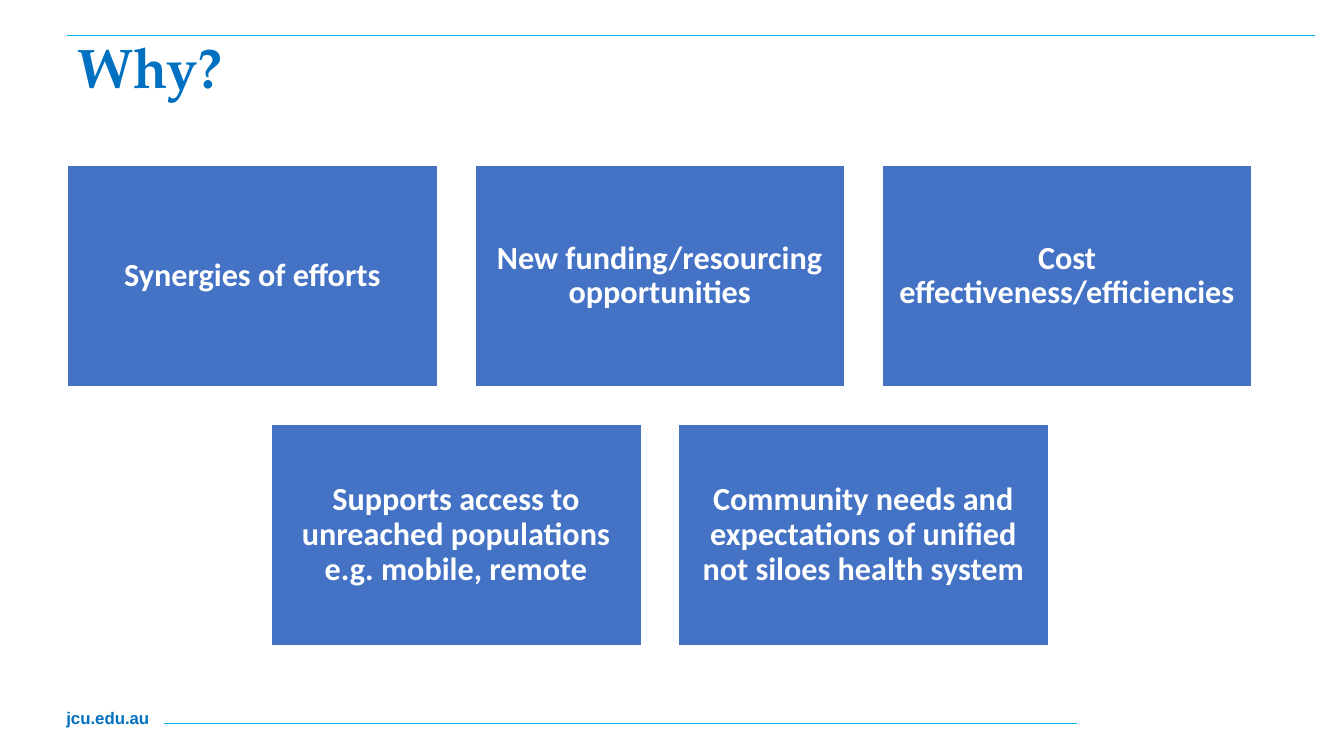
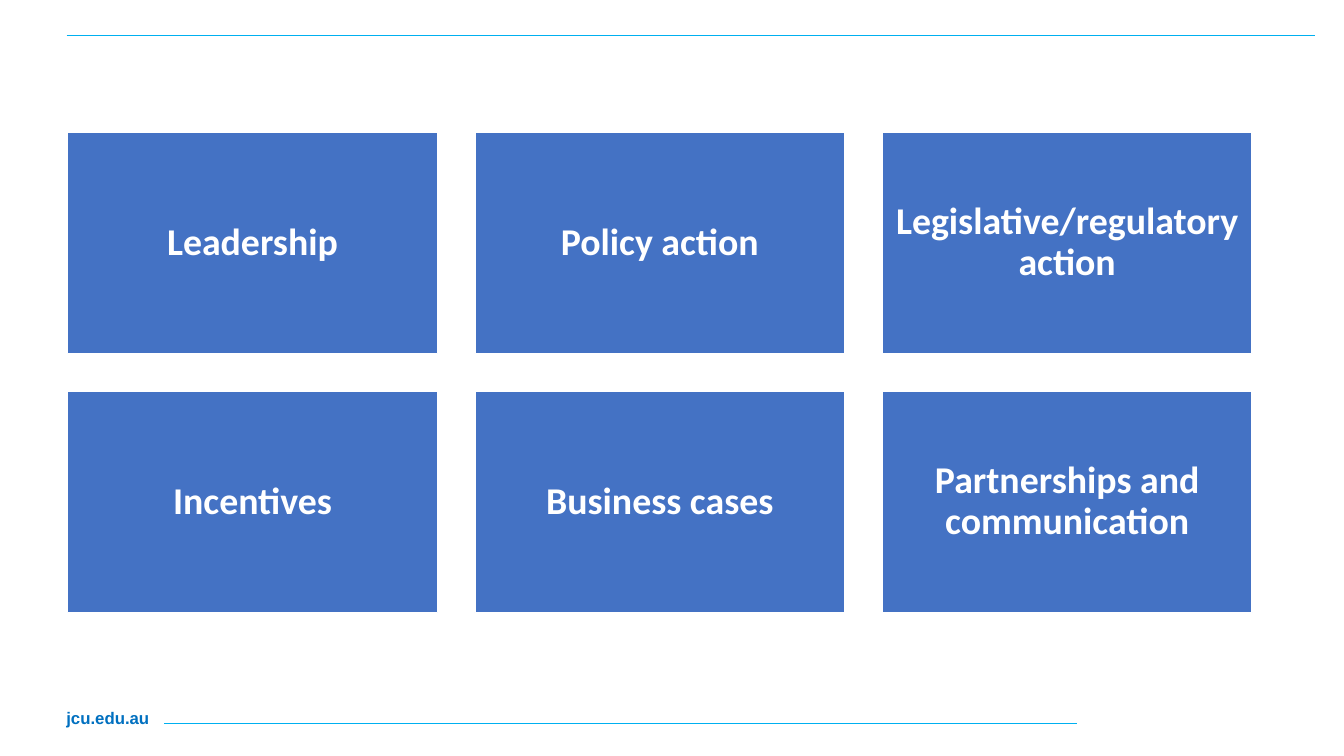
from dataclasses import dataclass

from lxml import etree
from pptx import Presentation
from pptx.dml.color import RGBColor
from pptx.enum.shapes import MSO_CONNECTOR, MSO_SHAPE
from pptx.enum.text import MSO_ANCHOR, MSO_AUTO_SIZE, PP_ALIGN
from pptx.oxml.ns import qn
from pptx.util import Inches, Pt

STRAIGHT = MSO_CONNECTOR.STRAIGHT
RECTANGLE = MSO_SHAPE.RECTANGLE
TOP, MIDDLE = MSO_ANCHOR.TOP, MSO_ANCHOR.MIDDLE
LEFT, CENTER = PP_ALIGN.LEFT, PP_ALIGN.CENTER
NO_AUTOFIT = MSO_AUTO_SIZE.NONE
TITLE_ONLY, BLANK = 5, 6


@dataclass(frozen=True)
class Theme:
    brand: RGBColor = RGBColor(0x00, 0x70, 0xC0)
    rule: RGBColor = RGBColor(0x00, 0xB0, 0xF0)
    tile: RGBColor = RGBColor(0x44, 0x72, 0xC4)
    white: RGBColor = RGBColor(0xFF, 0xFF, 0xFF)
    title_font: str = "TeX Gyre Pagella"
    tile_font: str = "Calibri"
    footer_font: str = "Arial"
    title_size: int = 40
    footer_size: int = 12


theme = Theme()


def write_text(shape, text, *, font, size, color, align=LEFT, anchor=TOP,
               inset=(0.1, 0.05), spacing=1.0):
    """Put one bold paragraph into a shape; inset is (sides, top and bottom)."""
    frame = shape.text_frame
    frame.word_wrap = True
    frame.auto_size = NO_AUTOFIT
    frame.vertical_anchor = anchor
    frame.margin_left = frame.margin_right = Inches(inset[0])
    frame.margin_top = frame.margin_bottom = Inches(inset[1])
    para = frame.paragraphs[0]
    para.alignment = align
    para.line_spacing = spacing
    span = para.add_run()
    span.text = text
    span.font.name = font
    span.font.size = Pt(size)
    span.font.bold = True
    span.font.color.rgb = color


deck = Presentation()
deck.slide_width, deck.slide_height = Inches(13.33), Inches(7.5)
why_page = deck.slides.add_slide(deck.slide_layouts[TITLE_ONLY])
action_page = deck.slides.add_slide(deck.slide_layouts[BLANK])

# Shared footer and rules: drawn once, then moved to the slide master
footer = why_page.shapes.add_textbox(Inches(0.56), Inches(6.97), Inches(1.23), Inches(0.3))
write_text(footer, "jcu.edu.au", font=theme.footer_font, size=theme.footer_size,
           color=theme.brand)
master_parts = [footer]
for start, end, y in [(1.63, 10.68, 7.18), (0.66, 13.04, 0.35)]:
    rule = why_page.shapes.add_connector(STRAIGHT, Inches(start), Inches(y),
                                         Inches(end), Inches(y))
    rule.line.color.rgb = theme.rule
    rule.line.width = Pt(0.5)
    etree.SubElement(rule.element.spPr, qn("a:effectLst"))
    master_parts.append(rule)
for part in master_parts:
    deck.slide_master.shapes.element.append(part.element)

# Title
title = why_page.shapes.title
title.left, title.top = Inches(0.67), Inches(0.35)
title.width, title.height = Inches(11.74), Inches(0.57)
write_text(title, "Why?", font=theme.title_font, size=theme.title_size,
           color=theme.brand, spacing=0.9)

# Tile grids: each row is centred on the widest row
TILE_WIDTH, TILE_HEIGHT, GAP = 3.67, 2.2, 0.37
GRID_LEFT, COLUMNS = 0.67, 3
STEP_X, STEP_Y = TILE_WIDTH + GAP, TILE_HEIGHT + GAP

grids = [
    (why_page, 1.64, 23, 0.1, [
        ["Synergies of efforts", "New funding/resourcing opportunities",
         "Cost effectiveness/efficiencies"],
        ["Supports access to unreached populations e.g. mobile, remote",
         "Community needs and expectations of unified not siloes health system"],
    ]),
    (action_page, 1.31, 27, 0.11, [
        ["Leadership", "Policy action", "Legislative/regulatory action"],
        ["Incentives", "Business cases", "Partnerships and communication"],
    ]),
]

for page, grid_top, size, inset, rows in grids:
    for row, labels in enumerate(rows):
        row_left = GRID_LEFT + (COLUMNS - len(labels)) * STEP_X / 2
        for column, label in enumerate(labels):
            tile = page.shapes.add_shape(
                RECTANGLE, Inches(row_left + column * STEP_X),
                Inches(grid_top + row * STEP_Y), Inches(TILE_WIDTH), Inches(TILE_HEIGHT))
            tile.shadow.inherit = False
            tile.fill.solid()
            tile.fill.fore_color.rgb = theme.tile
            tile.line.color.rgb = theme.white
            tile.line.width = Pt(1)
            write_text(tile, label, font=theme.tile_font, size=size, color=theme.white,
                       align=CENTER, anchor=MIDDLE, inset=(inset, inset), spacing=0.9)

deck.save("out.pptx")
